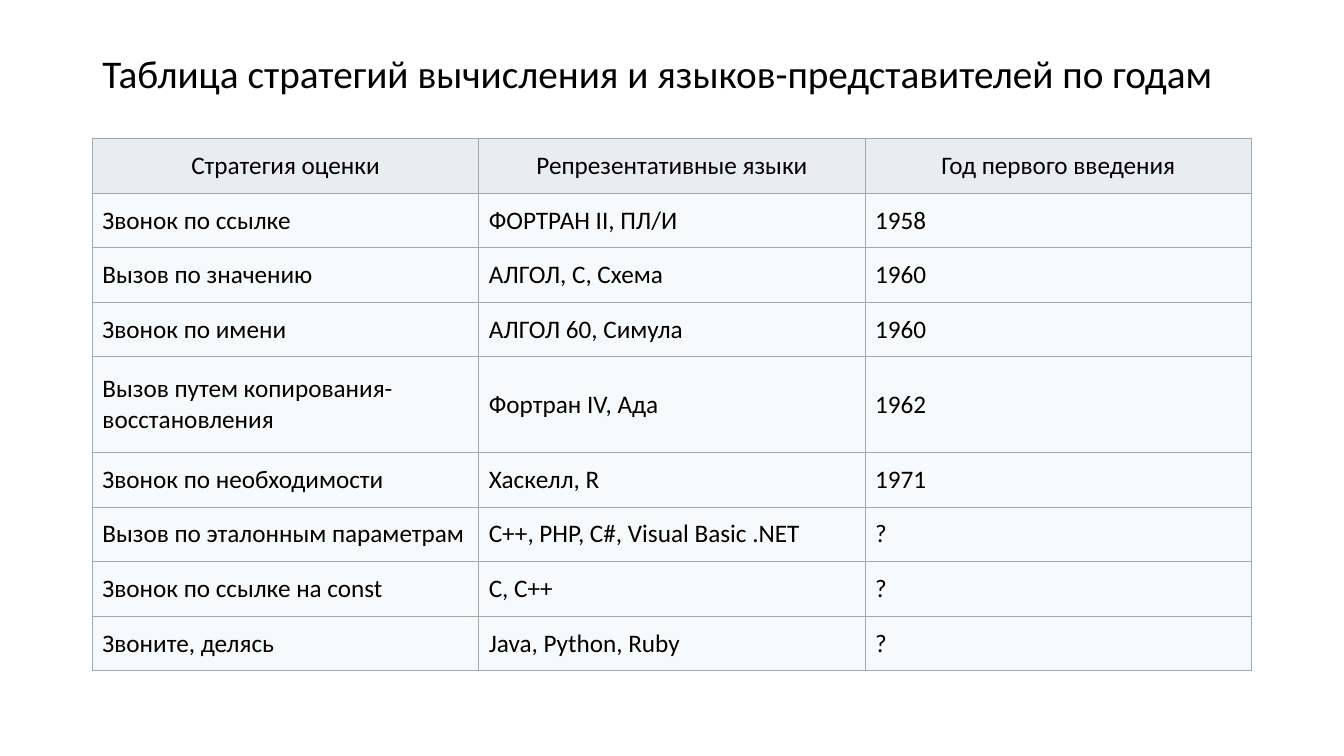
"""Builds a slide with a table of evaluation strategies by year."""
from dataclasses import dataclass

from lxml import etree
from pptx import Presentation
from pptx.dml.color import RGBColor
from pptx.enum.text import MSO_ANCHOR, MSO_AUTO_SIZE, PP_ALIGN
from pptx.oxml.ns import qn
from pptx.util import Emu, Pt

LEFT, CENTER = PP_ALIGN.LEFT, PP_ALIGN.CENTER
TOP, MIDDLE = MSO_ANCHOR.TOP, MSO_ANCHOR.MIDDLE
GROW = MSO_AUTO_SIZE.SHAPE_TO_FIT_TEXT
EMU_PER_PX = 9525
TITLE_ONLY = 5


@dataclass(frozen=True)
class Theme:
    """Holds the font, colours and type sizes of the slide."""
    font: str = "Calibri"
    text: str = "000000"
    header_fill: str = "EAECF0"
    body_fill: str = "F8F9FA"
    border: str = "A2A9B1"
    border_width: float = 0.75
    title_size: int = 28
    table_size: int = 18


THEME = Theme()
TITLE = "Таблица стратегий вычисления и языков-представителей по годам"
STRATEGIES = [
    ("Стратегия оценки", "Репрезентативные языки", "Год первого введения"),
    ("Звонок по ссылке", "ФОРТРАН II, ПЛ/И", "1958"),
    ("Вызов по значению", "АЛГОЛ, C, Схема", "1960"),
    ("Звонок по имени", "АЛГОЛ 60, Симула", "1960"),
    ("Вызов путем копирования-восстановления", "Фортран IV, Ада", "1962"),
    ("Звонок по необходимости", "Хаскелл, R", "1971"),
    ("Вызов по эталонным параметрам", "C++, PHP, C#, Visual Basic .NET", "?"),
    ("Звонок по ссылке на const", "C, C++", "?"),
    ("Звоните, делясь", "Java, Python, Ruby", "?"),
]
MARGIN, CONTENT_WIDTH = 88, 1104
TITLE_TOP, TITLE_HEIGHT = 42, 55
TABLE_TOP, ROW_HEIGHT, TALL_ROW_HEIGHT, TALL_ROW = 132, 52, 91, 4


def px(length):
    """Turns a length in px into EMU."""
    return Emu(length * EMU_PER_PX)


def write_text(text_frame, text, *, size, align=LEFT):
    """Writes one formatted paragraph into a text frame."""
    paragraph = text_frame.paragraphs[0]
    paragraph.alignment = align
    run = paragraph.add_run()
    run.text = text
    run.font.name = THEME.font
    run.font.size = Pt(size)
    run.font.color.rgb = RGBColor.from_string(THEME.text)


def add_borders(cell):
    """Draws the same thin line on all four sides of a cell."""
    properties = cell._tc.get_or_add_tcPr()
    for index, side in enumerate(("a:lnL", "a:lnR", "a:lnT", "a:lnB")):
        line = etree.Element(qn(side), w=str(Pt(THEME.border_width)))
        fill = etree.SubElement(line, qn("a:solidFill"))
        etree.SubElement(fill, qn("a:srgbClr"), val=THEME.border)
        properties.insert(index, line)


def fill_cell(cell, text, *, is_header):
    """Formats one table cell and writes its text."""
    colour = THEME.header_fill if is_header else THEME.body_fill
    cell.fill.solid()
    cell.fill.fore_color.rgb = RGBColor.from_string(colour)
    cell.vertical_anchor = MIDDLE
    add_borders(cell)
    write_text(cell.text_frame, text, size=THEME.table_size,
               align=CENTER if is_header else LEFT)


def set_title(slide, text):
    """Places the title placeholder and writes the title."""
    title = slide.shapes.title
    title.left, title.top = px(MARGIN), px(TITLE_TOP)
    title.width, title.height = px(CONTENT_WIDTH), px(TITLE_HEIGHT)
    title.text_frame.word_wrap = True
    title.text_frame.auto_size = GROW
    title.text_frame.vertical_anchor = TOP
    write_text(title.text_frame, text, size=THEME.title_size)


def add_strategy_table(slide, rows):
    """Adds the table with a header row and equal columns."""
    heights = [TALL_ROW_HEIGHT if index == TALL_ROW else ROW_HEIGHT
               for index in range(len(rows))]
    column_count = len(rows[0])
    table = slide.shapes.add_table(
        len(rows), column_count, px(MARGIN), px(TABLE_TOP),
        px(CONTENT_WIDTH), px(sum(heights))).table
    table.horz_banding = False
    for column in table.columns:
        column.width = px(CONTENT_WIDTH // column_count)
    table.first_row = False
    for row_index, (texts, height) in enumerate(zip(rows, heights)):
        table.rows[row_index].height = px(height)
        for column_index, text in enumerate(texts):
            fill_cell(table.cell(row_index, column_index), text,
                      is_header=row_index == 0)


def main():
    """Builds and saves the presentation."""
    presentation = Presentation()
    presentation.slide_width, presentation.slide_height = px(1280), px(720)
    slide = presentation.slides.add_slide(
        presentation.slide_layouts[TITLE_ONLY])
    set_title(slide, TITLE)
    add_strategy_table(slide, STRATEGIES)
    presentation.save("out.pptx")


if __name__ == "__main__":
    main()
